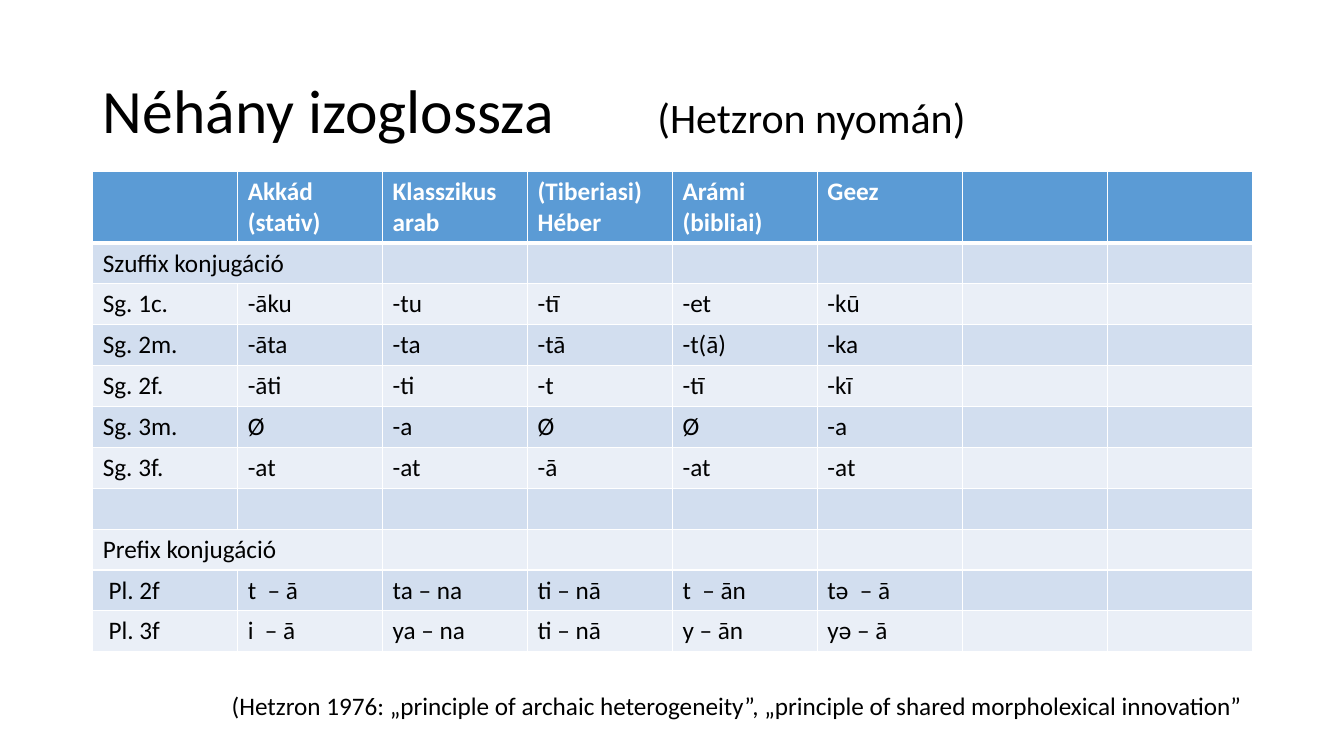
from pptx import Presentation
from pptx.dml.color import RGBColor as RGB
from pptx.enum.text import MSO_ANCHOR as Anchor, MSO_AUTO_SIZE as Fit, PP_ALIGN as Align
from pptx.util import Inches, Pt
from lxml.etree import SubElement as Sub

HUES = {"ink": "000000", "paper": "FFFFFF", "head": "5B9BD5",
        "dark": "D2DEEF", "light": "EAEFF7"}
LEFT, WIDE = 0.92, 11.5
COLS = 8
NS = "{http://schemas.openxmlformats.org/drawingml/2006/main}"

# Table content; cells left out at the end of a row stay empty
ROWS = [
    ["", "Akkád\n(stativ)", "Klasszikus\narab", "(Tiberiasi) Héber",
     "Arámi\n(bibliai)", "Geez"],
    ["Szuffix konjugáció"],
    ["Sg. 1c.", "-āku", "-tu", "-tī", "-et", "-kū"],
    ["Sg. 2m.", "-āta", "-ta", "-tā", "-t(ā)", "-ka"],
    ["Sg. 2f.", "-āti", "-ti", "-t", "-tī", "-kī"],
    ["Sg. 3m.", "Ø", "-a", "Ø", "Ø", "-a"],
    ["Sg. 3f.", "-at", "-at", "-ā", "-at", "-at"],
    [],
    ["Prefix konjugáció"],
    [" Pl. 2f", "t  – ā", "ta – na", "ti – nā", "t  – ān", "tə  – ā"],
    [" Pl. 3f", "i  – ā", "ya – na", "ti – nā", "y – ān", "yə – ā"],
]


class Page:
    def __init__(self, slide, face="Calibri"):
        self.slide = slide
        self.face = face

    def style(self, font, hue="ink", **form):
        for key, val in {"name": self.face, "size": Pt(18), **form}.items():
            setattr(font, key, val)
        font.color.rgb = RGB.from_string(HUES[hue])

    def place(self, shape, *box):
        for key, val in zip(("left", "top", "width", "height"), box):
            setattr(shape, key, Inches(val))

    def title(self, parts, *box):
        shape = self.slide.shapes.title
        self.place(shape, *box)
        frame = shape.text_frame
        frame.vertical_anchor = Anchor.MIDDLE
        para = frame.paragraphs[0]
        para.alignment, para.line_spacing = Align.LEFT, 0.9
        for text, size in parts:
            run = para.add_run()
            run.text = text
            self.style(run.font, size=Pt(size))

    def note(self, text, *box):
        frame = self.slide.shapes.add_textbox(*map(Inches, box)).text_frame
        frame.word_wrap, frame.auto_size = True, Fit.SHAPE_TO_FIT_TEXT
        para = frame.paragraphs[0]
        para.text, para.alignment = text, Align.RIGHT
        self.style(para.runs[0].font)

    def edges(self, cell, **sides):
        props = cell._tc.get_or_add_tcPr()
        for side in "LRTB":
            line = Sub(props, f"{NS}ln{side}", w=str(Pt(sides.get(side, 1))))
            fill = Sub(line, f"{NS}solidFill")
            Sub(fill, f"{NS}srgbClr", val=HUES["paper"])

    def cell(self, cell, text, fill, sides, **form):
        self.edges(cell, **sides)
        cell.fill.solid()
        cell.fill.fore_color.rgb = RGB.from_string(HUES[fill])
        cell.text = text
        for para in cell.text_frame.paragraphs:
            self.style(para.font, **form)
            for run in para.runs:
                self.style(run.font, **form)

    def table(self, rows, head, step, *box):
        grid = self.slide.shapes.add_table(
            len(rows), COLS, *map(Inches, box)).table
        for r, texts in enumerate(rows):
            grid.rows[r].height = Inches(step if r else head)
            # Header colours first, then alternating bands
            fill = ("dark" if r % 2 else "light") if r else "head"
            form = {"hue": "ink" if r else "paper", "bold": r == 0}
            sides = {0: {"B": 3}, 1: {"T": 3}}.get(r, {})
            for c in range(COLS):
                text = texts[c] if c < len(texts) else ""
                self.cell(grid.cell(r, c), text, fill, sides, **form)
            # A lone label is a section heading over two columns
            if len(texts) == 1:
                grid.cell(r, 0).merge(grid.cell(r, 1))


def main():
    deck = Presentation()
    deck.slide_width, deck.slide_height = Inches(13.33), Inches(7.5)
    page = Page(deck.slides.add_slide(deck.slide_layouts[5]))

    # Title with its source
    page.title([("Néhány izoglossza \t\t", 44), ("(Hetzron nyomán)", 30)],
               LEFT, 0.4, WIDE, 1.45)
    # Conjugation endings
    page.table(ROWS, 0.7, 0.4, LEFT, 1.7, WIDE, 4.7)
    # Reference
    page.note("(Hetzron 1976: „principle of archaic heterogeneity”, "
              "„principle of shared morpholexical innovation”",
              LEFT, 6.8, WIDE, 0.4)
    deck.save("out.pptx")


if __name__ == "__main__":
    main()
